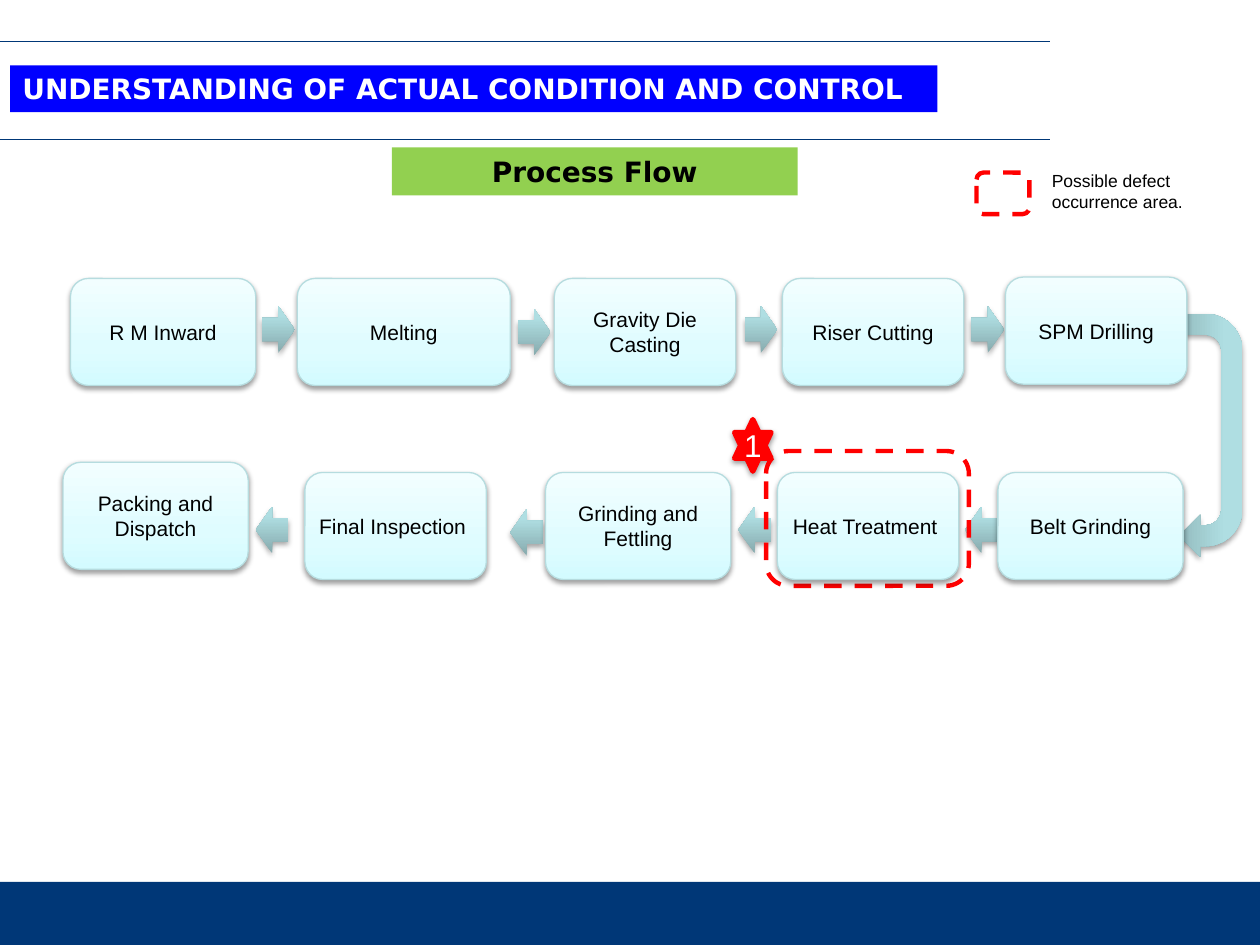
import dataclasses
import typing

import pptx
import pptx.dml.color
import pptx.enum.dml
import pptx.enum.shapes
import pptx.enum.text
import pptx.oxml
import pptx.oxml.ns
import pptx.util

COLORS = {
    "navy": "003777", "blue": "0000FF", "green": "92D050", "red": "FF0000",
    "black": "000000", "white": "FFFFFF", "step_line": "B6DCDF",
}
STEP_GRADIENT = ((0, "D3FBFF"), (35, "DFFCFF"), (100, "F2FEFF"))
ARROW_GRADIENT = ((0, "87ABAE"), (80, "AFDEE2"), (100, "AFE0E4"))
SHAPE = pptx.enum.shapes.MSO_SHAPE
ALIGN = pptx.enum.text.PP_ALIGN
qn = pptx.oxml.ns.qn

prs = pptx.Presentation()
prs.slide_width = pptx.util.Inches(10)
prs.slide_height = pptx.util.Inches(7.5)
s = prs.slides.add_slide(prs.slide_layouts[6])


@dataclasses.dataclass(frozen=True)
class Area:
    """Percentages of the slide's width and height."""
    x: float
    y: float
    w: float
    h: float


@dataclasses.dataclass(frozen=True)
class Step:
    name: str
    x: float
    y: float
    w: float


@dataclasses.dataclass(frozen=True)
class Arrow:
    x: float
    y: float
    back: bool = False


TOP, BOTTOM = 29.47, 50
STEP_H, ARROW_W, ARROW_H = 11.33, 2.6, 4.93
ARROW_TOP, ARROW_BOTTOM = 32.4, 53.6

STEPS = (
    Step("R M Inward", 5.6, TOP, 14.7),
    Step("Melting", 23.6, TOP, 16.9),
    Step("Gravity Die Casting", 44, TOP, 14.4),
    Step("Riser Cutting", 62.1, TOP, 14.4),
    Step("SPM Drilling", 79.8, 29.33, 14.4),
    Step("Belt Grinding", 79.2, BOTTOM, 14.7),
    Step("Heat Treatment ", 61.7, BOTTOM, 14.4),
    Step("Grinding and Fettling", 43.3, BOTTOM, 14.7),
    Step("Final Inspection ", 24.2, BOTTOM, 14.4),
    Step("Packing and Dispatch", 5, 48.93, 14.7),
)
ARROWS = (
    Arrow(20.8, ARROW_TOP), Arrow(41.1, 32.67),
    Arrow(59.1, ARROW_TOP), Arrow(77.1, ARROW_TOP),
    Arrow(76.6, ARROW_BOTTOM, True), Arrow(58.6, ARROW_BOTTOM, True),
    Arrow(40.5, 53.87, True), Arrow(20.3, ARROW_BOTTOM, True),
)


def rgb(name: str) -> pptx.dml.color.RGBColor:
    return pptx.dml.color.RGBColor.from_string(COLORS[name])


def across(share: float) -> int:
    return round(prs.slide_width * share / 100)


def down(share: float) -> int:
    return round(prs.slide_height * share / 100)


def place(area: Area) -> tuple:
    return across(area.x), down(area.y), across(area.w), down(area.h)


def add_shape(kind, area: Area, fill: typing.Optional[str] = None,
              line: typing.Optional[str] = None, width: float = 0.75):
    sp = s.shapes.add_shape(kind, *place(area))
    sp.shadow.inherit = False
    if fill:
        sp.fill.solid()
        sp.fill.fore_color.rgb = rgb(fill)
    else:
        sp.fill.background()
    if line:
        sp.line.color.rgb = rgb(line)
        sp.line.width = pptx.util.Pt(width)
    else:
        sp.line.fill.background()
    return sp


def add_gradient(sp, stops: tuple) -> None:
    sp.fill.gradient()
    sp.fill.gradient_angle = 90
    gs_lst = sp._element.spPr.find(qn("a:gradFill")).find(qn("a:gsLst"))
    for gs in list(gs_lst):
        gs_lst.remove(gs)
    for position, color in stops:
        gs = pptx.oxml.parse_xml(
            f'<a:gs {pptx.oxml.ns.nsdecls("a")} pos="{position * 1000}">'
            f'<a:srgbClr val="{color}"/></a:gs>')
        gs_lst.append(gs)


def add_shadow(sp, alpha: int, distance: float) -> None:
    effects = sp._element.spPr.find(qn("a:effectLst"))
    effects.append(pptx.oxml.parse_xml(
        f'<a:outerShdw {pptx.oxml.ns.nsdecls("a")} blurRad="{pptx.util.Pt(3.1)}" '
        f'dist="{pptx.util.Pt(distance)}" dir="5400000" rotWithShape="0">'
        f'<a:srgbClr val="{COLORS["black"]}"><a:alpha val="{alpha * 1000}"/>'
        f'</a:srgbClr></a:outerShdw>'))


def set_text(sp, text: str, size: int, color: str = "black", font: str = "Arial",
             bold: bool = False, align=ALIGN.CENTER,
             insets: tuple = (0.1, 0.05)) -> None:
    tf = sp.text_frame
    tf.word_wrap = True
    tf.vertical_anchor = pptx.enum.text.MSO_ANCHOR.MIDDLE
    tf.margin_left = tf.margin_right = pptx.util.Inches(insets[0])
    tf.margin_top = tf.margin_bottom = pptx.util.Inches(insets[1])
    p = tf.paragraphs[0]
    p.text = text
    p.alignment = align
    p.font.name = font
    p.font.size = pptx.util.Pt(size)
    p.font.bold = bold
    p.font.color.rgb = rgb(color)


def add_rule(y: float) -> None:
    line = s.shapes.add_connector(
        pptx.enum.shapes.MSO_CONNECTOR.STRAIGHT, 0, down(y), across(83.3), down(y))
    line.line.color.rgb = rgb("navy")
    line.line.width = pptx.util.Pt(0.75)
    line._element.spPr.append(pptx.oxml.parse_xml(
        f'<a:effectLst {pptx.oxml.ns.nsdecls("a")}/>'))


def add_defect_area(area: Area) -> None:
    sp = add_shape(SHAPE.ROUNDED_RECTANGLE, area, line="red", width=2.5)
    sp.line.dash_style = pptx.enum.dml.MSO_LINE.DASH


def add_flow_arrow(kind, area: Area):
    sp = add_shape(kind, area)
    add_gradient(sp, ARROW_GRADIENT)
    add_shadow(sp, 35, 1.8)
    return sp


def add_arrow(arrow: Arrow) -> None:
    sp = add_flow_arrow(SHAPE.RIGHT_ARROW, Area(arrow.x, arrow.y, ARROW_W, ARROW_H))
    if arrow.back:
        sp._element.spPr.find(qn("a:xfrm")).set("flipH", "1")


def add_step(step: Step) -> None:
    sp = add_shape(SHAPE.ROUNDED_RECTANGLE, Area(step.x, step.y, step.w, STEP_H),
                   line="step_line")
    add_gradient(sp, STEP_GRADIENT)
    add_shadow(sp, 38, 1.6)
    set_text(sp, step.name, 12, insets=(0.02, 0.02))


def main() -> None:
    add_shape(SHAPE.RECTANGLE, Area(0, 93.33, 100, 6.67), "navy")
    for y in (4.4, 14.8):
        add_rule(y)

    title = add_shape(SHAPE.RECTANGLE, Area(0.8, 6.93, 73.6, 4.93), "blue")
    set_text(title, "UNDERSTANDING OF ACTUAL CONDITION AND CONTROL", 16, "white",
             "DejaVu Sans", True, ALIGN.LEFT)
    heading = add_shape(SHAPE.RECTANGLE, Area(31.1, 15.6, 32.2, 5.07), "green")
    set_text(heading, "Process Flow", 16, font="DejaVu Sans", bold=True)

    add_defect_area(Area(77.5, 18.27, 4.2, 4.4))
    legend = s.shapes.add_textbox(*place(Area(82.5, 17.33, 13.3, 5.87)))
    set_text(legend, "Possible defect occurrence area.", 10, align=ALIGN.LEFT)
    legend.text_frame.auto_size = pptx.enum.text.MSO_AUTO_SIZE.SHAPE_TO_FIT_TEXT

    for arrow in ARROWS:
        add_arrow(arrow)
    turn = add_flow_arrow(SHAPE.U_TURN_ARROW, Area(85.6, 41.6, 19.3, 8.93))
    turn.rotation = 90

    star = add_shape(SHAPE.STAR_6_POINT, Area(58.3, 44.4, 2.9, 5.47), "red", "red", 3)
    add_shadow(star, 38, 1.6)
    set_text(star, "1", 18, "white", insets=(0, 0.04))
    add_defect_area(Area(60.8, 47.73, 16.1, 14.27))
    for step in STEPS:
        add_step(step)

    prs.save("out.pptx")


if __name__ == "__main__":
    main()
